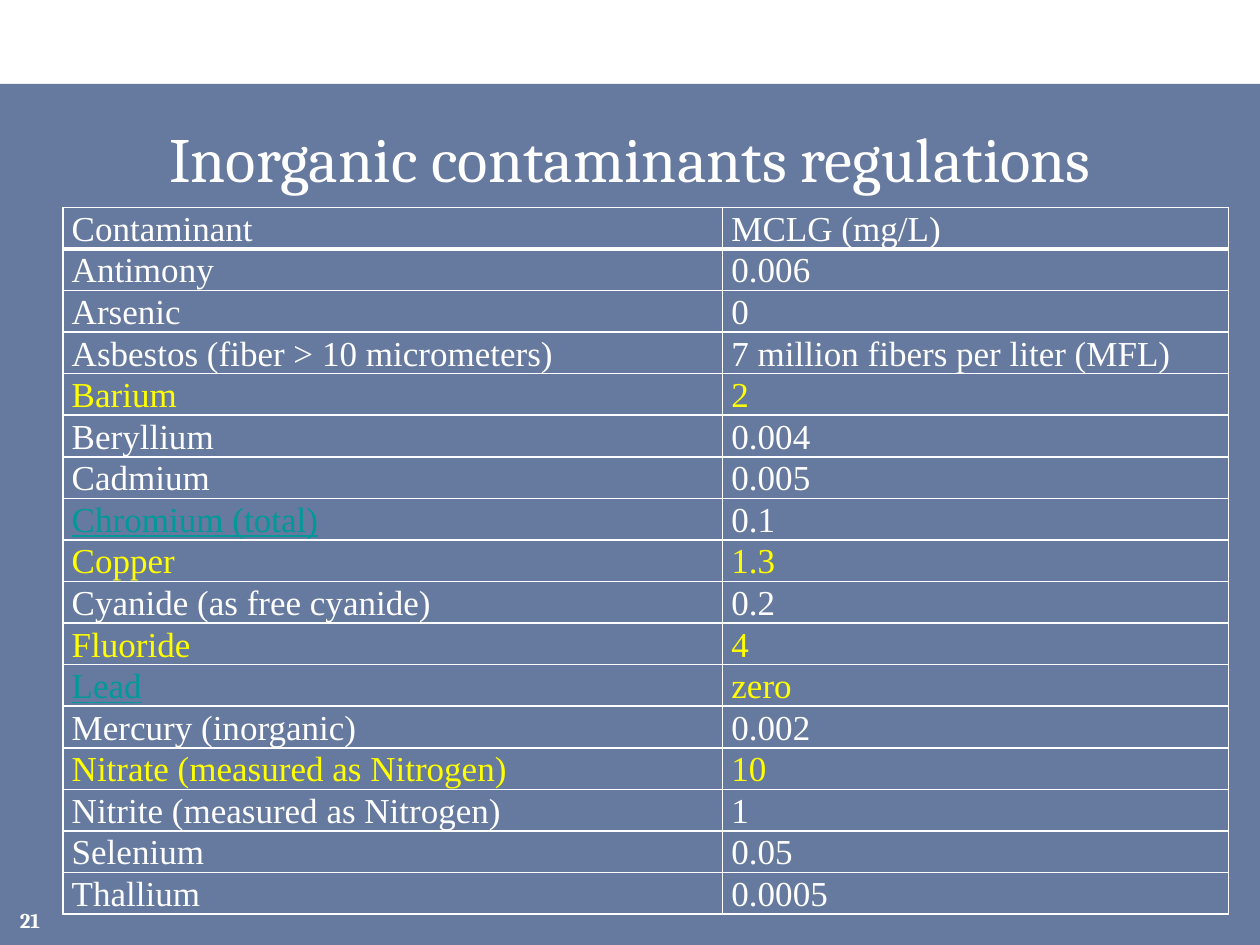
from dataclasses import dataclass
from lxml.etree import SubElement
from pptx import Presentation
from pptx.dml.color import RGBColor
from pptx.enum.shapes import MSO_SHAPE
from pptx.enum.text import MSO_ANCHOR, PP_ALIGN
from pptx.oxml.ns import qn
from pptx.util import Pt


@dataclass(frozen=True)
class Theme:
    navy: str = "002060"
    white: str = "FFFFFF"
    gold: str = "FFFF00"
    teal: str = "009999"
    head: str = "Cambria"
    body: str = "Times New Roman"
    big: int = 36
    mid: int = 20
    small: int = 12


ROWS = [
    ("Contaminant", "MCLG (mg/L)", "ww"),
    ("Antimony", "0.006", "ww"),
    ("Arsenic", "0", "ww"),
    ("Asbestos (fiber > 10 micrometers)", "7 million fibers per liter (MFL)", "ww"),
    ("Barium", "2", "gg"),
    ("Beryllium", "0.004", "ww"),
    ("Cadmium", "0.005", "ww"),
    ("Chromium (total)", "0.1", "tw"),
    ("Copper", "1.3", "gg"),
    ("Cyanide (as free cyanide)", "0.2", "ww"),
    ("Fluoride", "4", "gg"),
    ("Lead", "zero", "tg"),
    ("Mercury (inorganic)", "0.002", "ww"),
    ("Nitrate (measured as Nitrogen)", "10", "gg"),
    ("Nitrite (measured as Nitrogen)", "1", "ww"),
    ("Selenium", "0.05", "ww"),
    ("Thallium", "0.0005", "ww"),
]


class Deck:
    """Holds the style and the current slide, and draws each kind of element."""

    def __init__(self, theme):
        self.theme = theme
        self.prs = Presentation()
        self.apply(self.prs, dict(slide_width=Pt(720), slide_height=Pt(540)))
        self.slide = self.prs.slides.add_slide(self.prs.slide_layouts[5])

    def apply(self, item, form):
        for key, value in form.items():
            setattr(item, key, value)

    def place(self, shape, box):
        names = ("left", "top", "width", "height")
        self.apply(shape, dict(zip(names, map(Pt, box))))

    def words(self, frame, text, color, font, align, space=None):
        para = frame.paragraphs[0]
        para.add_run().text = text
        self.apply(para, dict(alignment=align, line_spacing=space))
        face = para.runs[0].font
        self.apply(face, font)
        face.color.rgb = RGBColor.from_string(color)

    def panel(self, box, color, alpha):
        shape = self.slide.shapes.add_shape(MSO_SHAPE.RECTANGLE, *map(Pt, box))
        shape.shadow.inherit = False
        shape.line.fill.background()
        shape.fill.solid()
        shape.fill.fore_color.rgb = RGBColor.from_string(color)
        tint = next(shape._element.spPr.iter(qn("a:srgbClr")))
        SubElement(tint, qn("a:alpha"), val=str(alpha * 1000))
        self.slide.shapes._spTree.insert(2, shape._element)

    def title(self, text, box):
        shape = self.slide.shapes.title
        self.place(shape, box)
        self.apply(shape.text_frame, dict(word_wrap=True, vertical_anchor=MSO_ANCHOR.MIDDLE))
        font = dict(name=self.theme.head, size=Pt(self.theme.big))
        self.words(shape.text_frame, text, self.theme.white, font, PP_ALIGN.CENTER)

    def label(self, text, box):
        frame = self.slide.shapes.add_textbox(*map(Pt, box)).text_frame
        self.apply(frame, dict(word_wrap=True, vertical_anchor=MSO_ANCHOR.MIDDLE))
        font = dict(name=self.theme.head, size=Pt(self.theme.small), bold=True)
        self.words(frame, text, self.theme.white, font, PP_ALIGN.RIGHT)

    def border(self, cell, widths):
        props = cell._tc.get_or_add_tcPr()
        for side, width in zip("LRTB", widths):
            line = SubElement(props, qn(f"a:ln{side}"), w=str(Pt(width)))
            fill = SubElement(line, qn("a:solidFill"))
            SubElement(fill, qn("a:srgbClr"), val=self.theme.white)

    def cell(self, cell, text, color, widths):
        self.border(cell, widths)
        cell.fill.background()
        self.apply(cell, dict(
            margin_left=Pt(5), margin_right=Pt(5), margin_top=0,
            margin_bottom=0, vertical_anchor=MSO_ANCHOR.MIDDLE))
        font = dict(name=self.theme.body, size=Pt(self.theme.mid),
                    bold=False, underline=color == self.theme.teal)
        self.words(cell.text_frame, text, color, font, PP_ALIGN.LEFT, 1.07)

    def table(self, rows, left, top, cols, high):
        box = (left, top, sum(cols), high * len(rows))
        grid = self.slide.shapes.add_table(len(rows), len(cols), *map(Pt, box)).table
        self.apply(grid, dict(first_row=False, horz_banding=False))
        for col, width in zip(grid.columns, cols):
            col.width = Pt(width)
        inks = dict(w=self.theme.white, g=self.theme.gold, t=self.theme.teal)
        for i, (*texts, marks) in enumerate(rows):
            grid.rows[i].height = Pt(high)
            widths = (1, 1, 3 if i == 1 else 1, 3 if i == 0 else 1)
            for j, (text, mark) in enumerate(zip(texts, marks)):
                self.cell(grid.cell(i, j), text, inks[mark], widths)


def main():
    theme = Theme()
    deck = Deck(theme)
    deck.panel((0, 48, 720, 492), theme.navy, 60)
    deck.title("Inorganic contaminants regulations", (18, 60, 684, 60))
    deck.table(ROWS, 36, 118.5, (377, 289), 23.76)
    deck.label("21", (0, 511, 30, 29))
    deck.prs.save("out.pptx")


if __name__ == "__main__":
    main()
